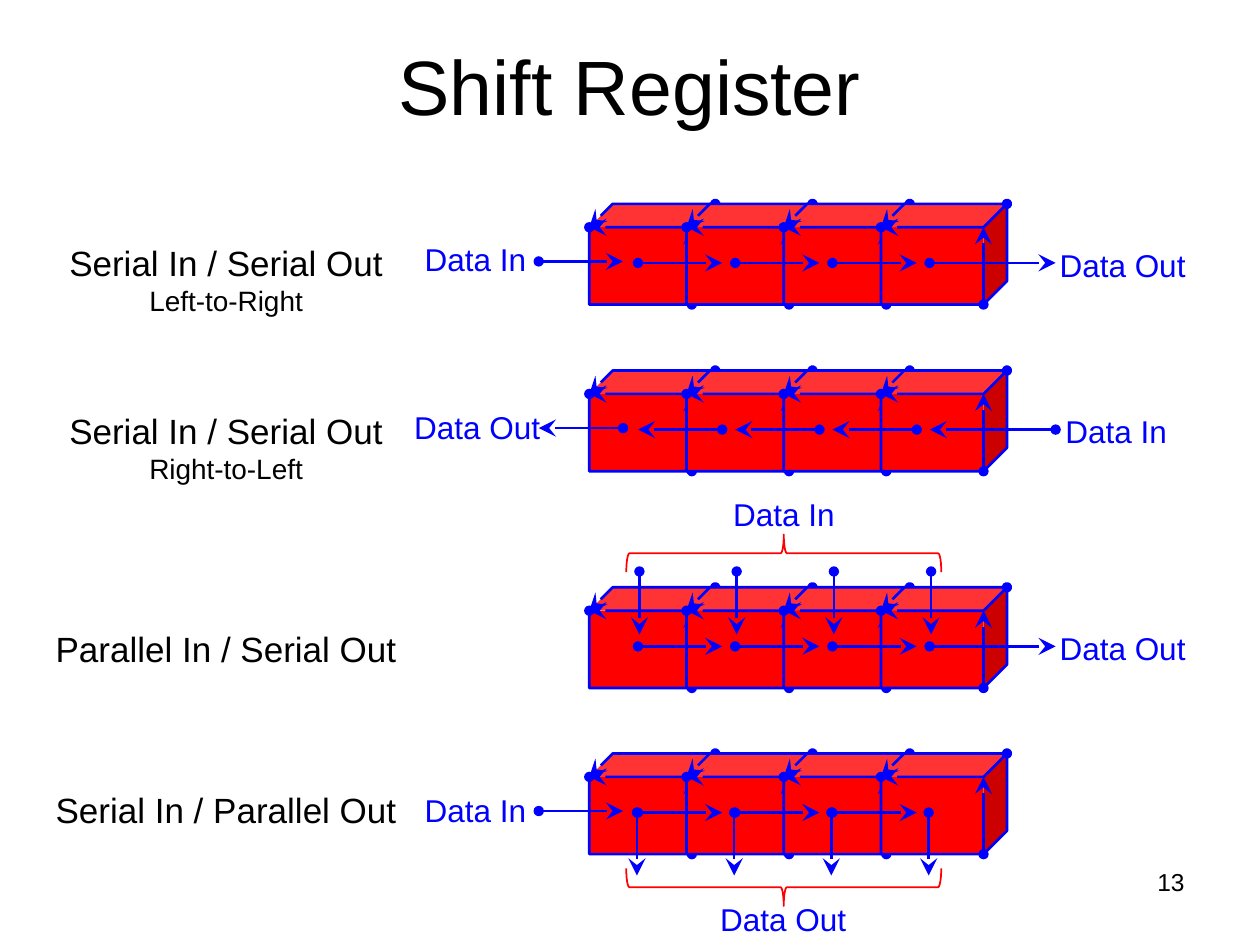
from pptx import Presentation
from pptx.dml.color import RGBColor
from pptx.enum.shapes import MSO_CONNECTOR as Link, MSO_SHAPE as Shape
from pptx.enum.text import MSO_ANCHOR as Anchor, PP_ALIGN as Align
from pptx.oxml.ns import qn
from pptx.util import Cm, Pt
from lxml.etree import SubElement

rgb = RGBColor.from_string
RED, BLUE, BLACK = "FF0000", "0000FF", "000000"
PITCH = 1.96  # distance between neighbouring cells


def label(x, y, w, h, lines, color=BLUE, align=Align.LEFT):
    box = slide.shapes.add_textbox(Cm(x), Cm(y), Cm(w), Cm(h))
    frame = box.text_frame
    frame.word_wrap = True
    frame.text = "\n".join(text for text, size in lines)
    for par, (text, size) in zip(frame.paragraphs, lines):
        par.alignment = align
        par.font.name = "Arial"
        par.font.size = Pt(size)
        par.font.color.rgb = rgb(color)


def stroke(shape, head, tail):
    shape.line.color.rgb = rgb(BLUE)
    shape.line.width = Pt(1.5)
    line = shape.line._get_or_add_ln()
    for tag, kind in (("a:headEnd", head), ("a:tailEnd", tail)):
        size = "lg" if kind == "stealth" else "med"
        SubElement(line, qn(tag), type=kind, w=size, len=size)


deck = Presentation()
deck.slide_width, deck.slide_height = Cm(25.4), Cm(19.05)
slide = deck.slides.add_slide(deck.slide_layouts[5])

# Title
title = slide.shapes.title
title.left, title.top, title.width, title.height = Cm(0), Cm(0), Cm(25.4), Cm(3.4)
title.text_frame.text = "Shift Register"
title.text_frame.vertical_anchor = Anchor.MIDDLE
par = title.text_frame.paragraphs[0]
par.alignment = Align.CENTER
par.font.name = "Arial"
par.font.size = Pt(44)
par.font.color.rgb = rgb(BLACK)

# Page number
label(18.21, 17.35, 5.92, 1.32, [("13", 14)], BLACK, Align.RIGHT)

# Registers: top, left port, right port, reversed, vertical arrows (x, from, to)
rows = [
    (4.11, True, True, False, None),
    (7.47, True, True, True, None),
    (11.84, False, True, False, (12.89, -0.32, 0.95)),
    (15.19, True, False, False, (12.84, 1.19, 2.46)),
]
for top, left, right, back, drop in rows:
    # Cells
    for i in range(4):
        cube = slide.shapes.add_shape(
            Shape.CUBE, Cm(11.88 + i * PITCH), Cm(top), Cm(2.54), Cm(2.03))
        cube.adjustments[0] = 0.233
        cube.shadow.inherit = False
        cube.fill.solid()
        cube.fill.fore_color.rgb = rgb(RED)
        stroke(cube, "stealth", "oval")

    # Data flow
    mid = top + 1.19
    flows = [(12.86 + i * PITCH, mid, 14.56 + i * PITCH, mid) for i in range(3)]
    if right:
        flows.append((18.74, mid, 21.28, mid))
    if left:
        flows.append((10.86, mid - 0.03, 12.56, mid - 0.03))
    if drop:
        x, start, end = drop
        flows += [(x + i * PITCH, top + start, x + i * PITCH, top + end)
                  for i in range(4)]
    ends = ("stealth", "oval") if back else ("oval", "stealth")
    for flow in flows:
        arrow = slide.shapes.add_connector(Link.STRAIGHT, *map(Cm, flow))
        stroke(arrow, *ends)
        SubElement(arrow._element.spPr, qn("a:effectLst"))

# Braces around the parallel ports
for y, turn in ((7.98, 90), (14.71, 270)):
    brace = slide.shapes.add_shape(Shape.LEFT_BRACE, Cm(15.42), Cm(y), Cm(0.76), Cm(6.35))
    brace.rotation = turn
    brace.shadow.inherit = False
    brace.fill.background()
    brace.line.color.rgb = rgb(RED)
    brace.line.width = Pt(1)

# Port labels
ports = [
    (8.31, 4.72, "Data In"), (21.11, 4.83, "Data Out"),
    (8.1, 8.1, "Data Out"), (21.23, 8.18, "Data In"),
    (14.53, 9.86, "Data In"), (21.11, 12.55, "Data Out"),
    (8.31, 15.82, "Data In"), (14.27, 18.01, "Data Out"),
]
for x, y, text in ports:
    label(x, y, 3.2, 1.02, [(text, 18)])

# Register names
names = [
    (4.75, 1.8, [("Serial In / Serial Out", 20), ("Left-to-Right", 16)]),
    (8.13, 1.8, [("Serial In / Serial Out", 20), ("Right-to-Left", 16)]),
    (12.52, 1.12, [("Parallel In / Serial Out", 20)]),
    (15.77, 1.12, [("Serial In / Parallel Out", 20)]),
]
for y, h, lines in names:
    label(0.84, y, 7.44, h, lines, BLACK, Align.CENTER)

deck.save("out.pptx")
